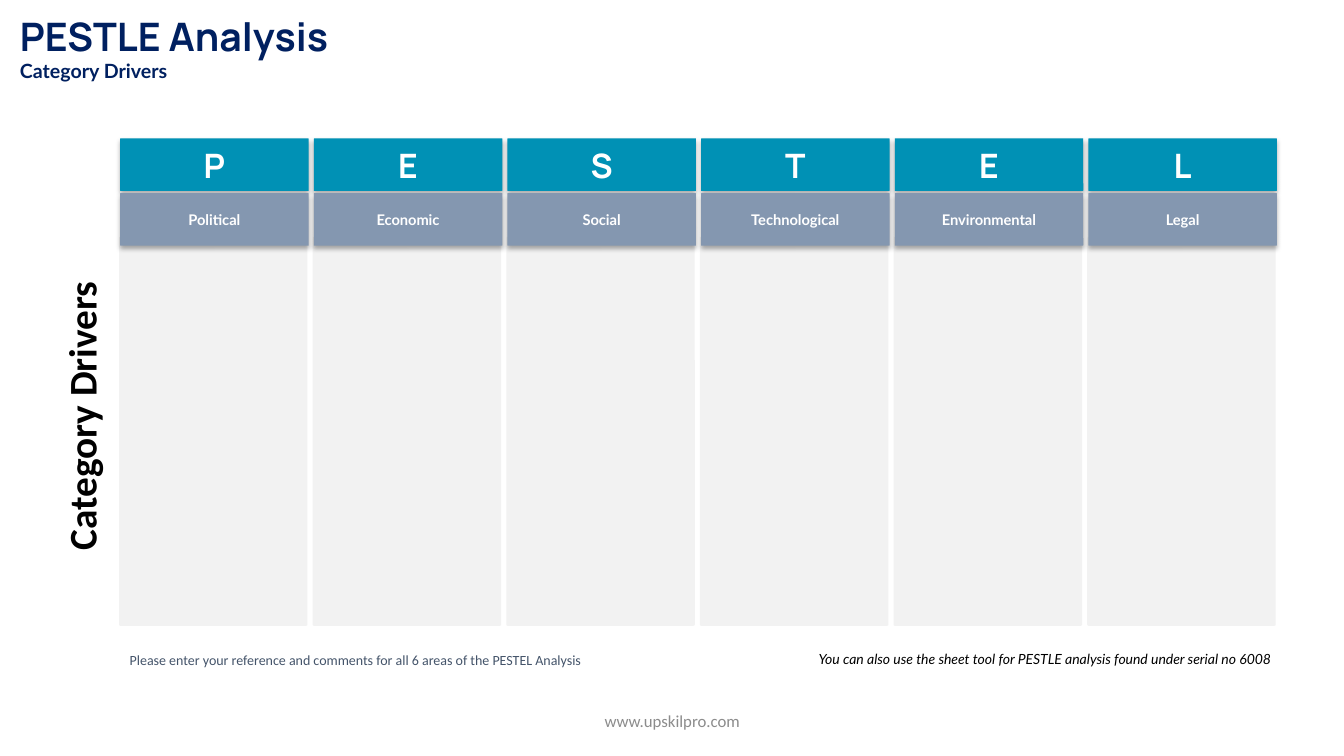
from lxml.etree import SubElement
from pptx import Presentation
from pptx.dml.color import RGBColor
from pptx.enum.shapes import MSO_SHAPE as Kind
from pptx.enum.text import MSO_ANCHOR as Anchor, MSO_AUTO_SIZE as Auto, PP_ALIGN as Align
from pptx.oxml.ns import qn
from pptx.util import Cm, Pt

NAVY = RGBColor(0x00, 0x20, 0x60)
TEAL = RGBColor(0x00, 0x91, 0xB5)
STEEL = RGBColor(0x84, 0x97, 0xB0)
SLATE = RGBColor(0x44, 0x54, 0x6A)
PALE = RGBColor(0xF2, 0xF2, 0xF2)
GREY = RGBColor(0x8C, 0x8C, 0x8C)
WHITE = RGBColor(0xFF, 0xFF, 0xFF)
BLACK = RGBColor(0x00, 0x00, 0x00)

AREAS = ["Political", "Economic", "Social", "Technological", "Environmental", "Legal"]
LEFT, PITCH, WIDTH = 3.0, 4.88, 4.75


def write(frame, text, size=10, face="Lato", color=BLACK, bold=False,
          italic=False, align=Align.LEFT, more=False):
    """Fill the first paragraph, or add another one when more is set."""
    para = frame.add_paragraph() if more else frame.paragraphs[0]
    para.alignment = align
    run = para.add_run()
    run.text = text
    font = run.font
    font.size, font.name = Pt(size), face
    font.bold, font.italic = bold, italic
    font.color.rgb = color
    return para


def shade(shape):
    """Give the shape a soft shadow straight below it."""
    effects = shape._element.spPr.find(qn("a:effectLst"))
    outer = SubElement(effects, qn("a:outerShdw"), blurRad=str(Pt(3.5)),
                       dist=str(Pt(2.2)), dir="5400000", algn="t", rotWithShape="0")
    tint = SubElement(outer, qn("a:srgbClr"), val="000000")
    SubElement(tint, qn("a:alpha"), val="32000")


class Board:
    def __init__(self, slide):
        self.shapes = slide.shapes

    def panel(self, x, y, w, h, fill, kind=Kind.ROUNDED_RECTANGLE):
        shape = self.shapes.add_shape(kind, Cm(x), Cm(y), Cm(w), Cm(h))
        if kind == Kind.ROUNDED_RECTANGLE:
            shape.adjustments[0] = 0.007
        shape.shadow.inherit = False
        shape.fill.solid()
        shape.fill.fore_color.rgb = fill
        shape.line.fill.background()
        return shape

    def head(self, x, y, text, fill, size, face):
        shape = self.panel(x, y, WIDTH, 1.32, fill)
        shade(shape)
        write(shape.text_frame, text, size=size, face=face, color=WHITE,
              bold=True, align=Align.CENTER)

    def label(self, x, y, w, h, anchor=Anchor.TOP, grow=False):
        box = self.shapes.add_textbox(Cm(x), Cm(y), Cm(w), Cm(h))
        frame = box.text_frame
        frame.word_wrap = True
        frame.vertical_anchor = anchor
        frame.auto_size = Auto.SHAPE_TO_FIT_TEXT if grow else Auto.NONE
        return box


def main():
    deck = Presentation()
    deck.slide_width, deck.slide_height = Cm(33.87), Cm(19.05)
    board = Board(deck.slides.add_slide(deck.slide_layouts[6]))

    for col, area in enumerate(AREAS):
        x = LEFT + col * PITCH
        board.panel(x, 5.97, WIDTH, 9.8, PALE)
        board.head(x + 0.03, 3.49, area[0], TEAL, 24, "Manrope")
        board.head(x + 0.03, 4.87, area, STEEL, 10.5, "Lato")

    note = board.panel(3.02, 16.28, 12.5, 0.69, WHITE, Kind.RECTANGLE)
    write(note.text_frame, "Please enter your reference and comments for all 6 areas "
          "of the PESTEL Analysis", face="Calibri", color=SLATE)

    side = board.label(-1.45, 9.68, 7.34, 1.52)
    side.rotation = 270
    side.text_frame.margin_right = 0
    para = write(side.text_frame, "Category Drivers", size=28, face="Calibri", bold=True)
    para.line_spacing = 0.9

    title = board.label(0.25, 0.18, 26.75, 2.06, grow=True).text_frame
    write(title, "PESTLE Analysis", size=28, face="Manrope", color=NAVY, bold=True)
    write(title, "Category Drivers", size=14, color=NAVY, bold=True, more=True)

    site = board.label(11.23, 17.65, 11.43, 1.02, anchor=Anchor.MIDDLE).text_frame
    write(site, "www.upskilpro.com", size=12, face="Calibri", color=GREY, align=Align.CENTER)

    hint = board.label(17.98, 16.26, 14.3, 0.69, grow=True).text_frame
    write(hint, "You can also use the sheet tool for PESTLE analysis found under "
          "serial no 6008", italic=True, align=Align.RIGHT)

    deck.save("out.pptx")


if __name__ == "__main__":
    main()
